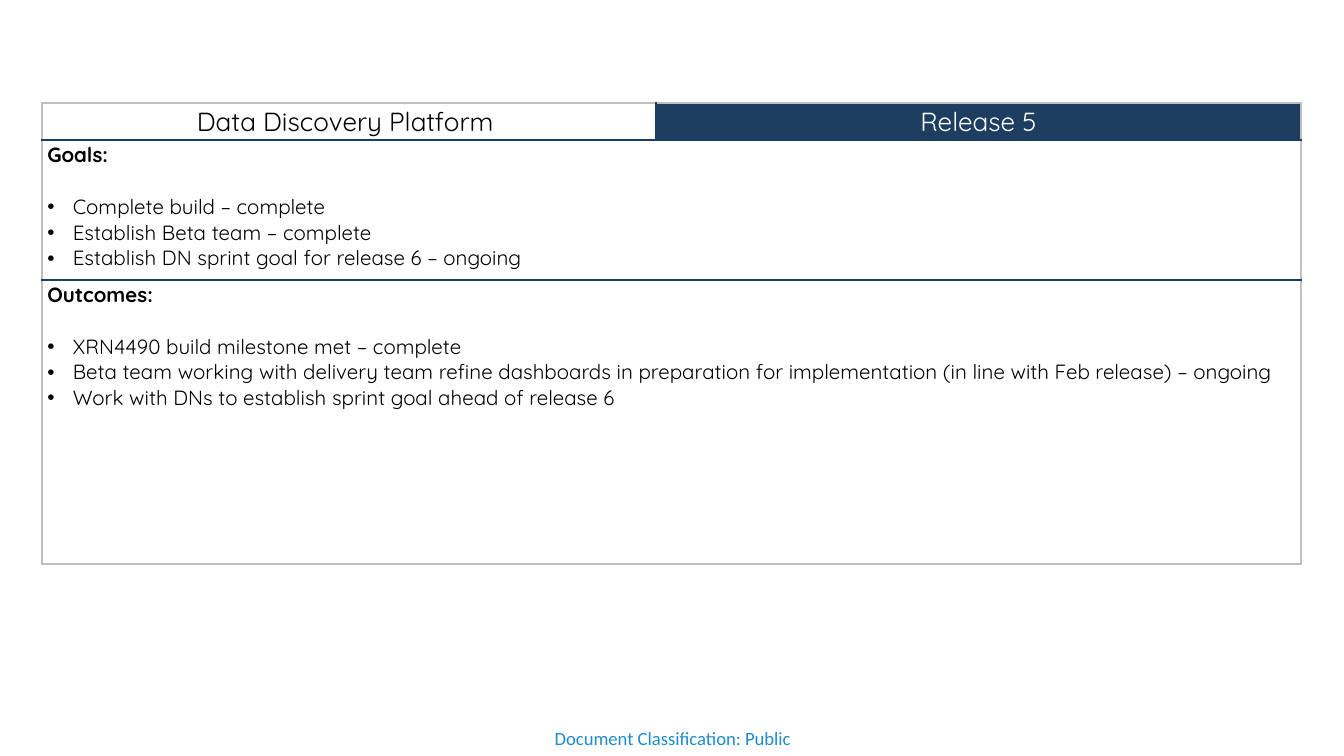
from lxml.etree import SubElement
from pptx import Presentation
from pptx.dml.color import RGBColor as RGB
from pptx.enum.text import MSO_ANCHOR as Anchor, PP_ALIGN as Align
from pptx.oxml import parse_xml
from pptx.oxml.ns import nsdecls, qn
from pptx.util import Inches, Pt

COLORS = {"navy": "1D3E61", "grey": "BFBFBF", "blue": "208BCC",
          "white": "FFFFFF", "black": "000000"}
WIDE = 10
HIGH = WIDE * 9 / 16
COLS = [0.457, 0.48]
ROWS = [0.049, 0.185, 0.376]
GAP = 13.75  # one line of body text, in points

PANELS = [
    ("Goals:", ["Complete build – complete",
                "Establish Beta team – complete",
                "Establish DN sprint goal for release 6 – ongoing"]),
    ("Outcomes:", ["XRN4490 build milestone met – complete",
                   "Beta team working with delivery team refine dashboards in "
                   "preparation for implementation (in line with Feb release) – ongoing",
                   "Work with DNs to establish sprint goal ahead of release 6"]),
]


def write(para, text, size=11, color="black", font="Quicksand", bold=False,
          align=Align.LEFT, before=0, bullet=False):
    if bullet:
        props = para._p.get_or_add_pPr()
        props.set("marL", str(Inches(0.19)))
        props.set("indent", str(-Inches(0.19)))
        SubElement(props, qn("a:buFont")).set("typeface", "Arial")
        SubElement(props, qn("a:buChar")).set("char", "•")
    para.alignment = align
    if before:
        para.space_before = Pt(before)
    run = para.add_run()
    run.text = text
    run.font.size, run.font.bold, run.font.name = Pt(size), bold, font
    run.font.color.rgb = RGB.from_string(COLORS[color])


class Deck:
    """Holds the page size, the file and the current slide; lengths are shares."""

    def __init__(self):
        self.file = Presentation()
        self.file.slide_width, self.file.slide_height = Inches(WIDE), Inches(HIGH)
        self.slide = self.file.slides.add_slide(self.file.slide_layouts[6])

    def place(self, x, y, w, h):
        return [Inches(x * WIDE), Inches(y * HIGH), Inches(w * WIDE), Inches(h * HIGH)]

    def label(self, box, text, **style):
        frame = self.slide.shapes.add_textbox(*self.place(*box)).text_frame
        frame.word_wrap = True
        frame.vertical_anchor = Anchor.MIDDLE
        frame.margin_left = frame.margin_right = frame.margin_top = frame.margin_bottom = 0
        write(frame.paragraphs[0], text, **style)

    def table(self, x, y, cols, rows):
        box = self.place(x, y, sum(cols), sum(rows))
        grid = self.slide.shapes.add_table(len(rows), len(cols), *box).table
        grid.first_row = grid.horz_banding = False
        for col, share in zip(grid.columns, cols):
            col.width = Inches(share * WIDE)
        for row, share in zip(grid.rows, rows):
            row.height = Inches(share * HIGH)
        return grid

    def cell(self, cell, fill=None, anchor=Anchor.TOP):
        cell.margin_left = cell.margin_right = Inches(0.04)
        cell.margin_top = cell.margin_bottom = Pt(1.2)
        cell.vertical_anchor = anchor
        if fill:
            cell.fill.solid()
            cell.fill.fore_color.rgb = RGB.from_string(COLORS[fill])
        else:
            cell.fill.background()
        return cell.text_frame

    def edges(self, cell, **sides):
        """Draws the cell borders L, R, T and B in the named colours."""
        props = cell._tc.get_or_add_tcPr()
        for spot, (side, color) in enumerate(sides.items()):
            props.insert(spot, parse_xml(
                f'<a:ln{side} {nsdecls("a")} w="{Pt(1)}"><a:solidFill>'
                f'<a:srgbClr val="{COLORS[color]}"/></a:solidFill></a:ln{side}>'))


def main():
    deck = Deck()
    grid = deck.table(0.0312, 0.136, COLS, ROWS)

    heads = [("Data Discovery Platform ", None, "black"), ("Release 5", "navy", "white")]
    for col, (text, fill, color) in enumerate(heads):
        frame = deck.cell(grid.cell(0, col), fill, Anchor.MIDDLE)
        write(frame.paragraphs[0], text, size=14, color=color, align=Align.CENTER)

    for row, (title, items) in enumerate(PANELS, 1):
        first, last = grid.cell(row, 0), grid.cell(row, 1)
        first.merge(last)
        deck.cell(last)
        frame = deck.cell(first)
        write(frame.paragraphs[0], title, bold=True)
        for spot, item in enumerate(items):
            write(frame.add_paragraph(), item, bullet=True, before=0 if spot else GAP)

    end = len(ROWS) - 1
    for row in range(len(ROWS)):
        for col in range(len(COLS)):
            split = "navy" if row == 0 else "grey"
            deck.edges(grid.cell(row, col),
                       L=split if col else "grey",
                       R="grey" if col or row else "navy",
                       T="navy" if row else "grey",
                       B="grey" if row == end else "navy")

    deck.label((0.395, 0.95, 0.211, 0.052), "Document Classification: Public",
               size=10, color="blue", font="Calibri", align=Align.CENTER)
    deck.file.save("out.pptx")


if __name__ == "__main__":
    main()
